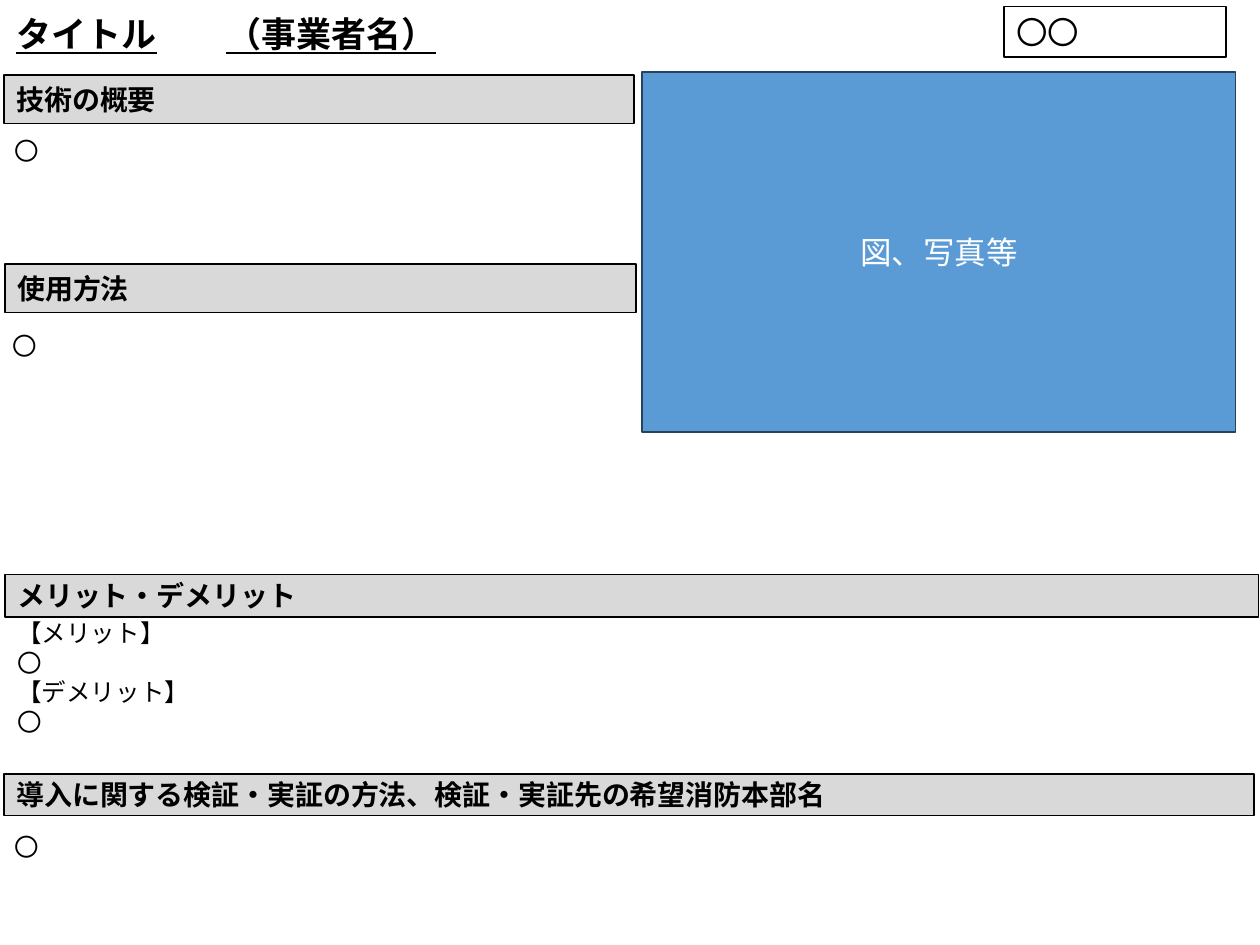
from pptx import Presentation
from pptx import util as u
from pptx.dml.color import RGBColor
from pptx.enum import shapes, text
from pptx.oxml.ns import qn
from lxml import etree

BLACK = RGBColor(0, 0, 0)
WHITE = RGBColor(255, 255, 255)
GREY = RGBColor(0xD9, 0xD9, 0xD9)
BLUE = RGBColor(0x5B, 0x9B, 0xD5)
NAVY = RGBColor(0x28, 0x44, 0x5D)
GOTHIC, LATIN = "Noto Sans CJK JP", "Calibri"

# Content: boxes are left, top, width, height in cm
TITLE = ("タイトル\t（事業者名）", (0.08, 0.13, 25.27, 1.12))
TITLE_TAB = 4.23
HEADINGS = [
    ("技術の概要", (0.08, 1.52, 12.7, 0.97)),
    ("使用方法", (0.1, 5.33, 12.73, 0.97)),
    ("メリット・デメリット", (0.1, 11.58, 25.27, 0.86)),
    ("導入に関する検証・実証の方法、検証・実証先の希望消防本部名", (0.08, 15.6, 25.2, 0.84)),
]
# Lines, box, hanging indent
BODIES = [
    (["〇"], (0.05, 2.62, 12.62, 0.86), 0),
    (["〇"], (0, 6.55, 14.3, 0.86), 0),
    (["【メリット】", "〇", "【デメリット】", "〇"], (0.1, 12.34, 24.82, 2.64), 0.3),
    (["〇"], (0.05, 16.64, 20.19, 0.86), 0.48),
]
FIGURE = ("図、写真等", (12.95, 1.45, 11.96, 7.26))
NUMBER = ("〇〇", (20.24, 0.13, 4.47, 1.02))

prs = Presentation()
prs.slide_width, prs.slide_height = u.Cm(25.4), u.Cm(19.05)
slide = prs.slides.add_slide(prs.slide_layouts[6])


def write(frame, lines, size, color=BLACK, font=GOTHIC, bold=False, underline=False,
          align=text.PP_ALIGN.LEFT, hang=0, tab=None):
    frame.word_wrap = True
    for i, line in enumerate(lines):
        para = frame.paragraphs[0] if i == 0 else frame.add_paragraph()
        para.alignment = align
        props = para._p.get_or_add_pPr()
        if hang:
            props.set("marL", str(u.Cm(hang)))
            props.set("indent", str(-u.Cm(hang)))
        if tab:
            tabs = etree.SubElement(props, qn("a:tabLst"))
            etree.SubElement(tabs, qn("a:tab"), pos=str(u.Cm(tab)), algn="l")
        run = para.add_run()
        run.text = line
        run.font.size = u.Pt(size)
        run.font.bold, run.font.underline = bold, underline
        run.font.color.rgb = color
        run.font.name = font
        etree.SubElement(run._r.get_or_add_rPr(), qn("a:ea"), typeface=font)


def add_box(box, fill, line):
    shape = slide.shapes.add_shape(shapes.MSO_SHAPE.RECTANGLE, *map(u.Cm, box))
    shape.shadow.inherit = False
    shape.fill.solid()
    shape.fill.fore_color.rgb = fill
    shape.line.color.rgb = line
    shape.line.width = u.Pt(1)
    shape.text_frame.vertical_anchor = text.MSO_ANCHOR.MIDDLE
    return shape.text_frame


def add_text(box):
    return slide.shapes.add_textbox(*map(u.Cm, box)).text_frame


# Section headings
for heading, box in HEADINGS:
    write(add_box(box, GREY, BLACK), [heading], 16, bold=True)

# Title
title, box = TITLE
write(add_text(box), [title], 20, bold=True, underline=True, tab=TITLE_TAB)

# Figure area
caption, box = FIGURE
write(add_box(box, BLUE, NAVY), [caption], 18, WHITE, LATIN, align=text.PP_ALIGN.CENTER)

# Number box
number, box = NUMBER
number_frame = add_box(box, WHITE, BLACK)
number_frame.vertical_anchor = text.MSO_ANCHOR.TOP
write(number_frame, [number], 18, font=LATIN)

# Section bodies
for lines, box, hang in BODIES:
    write(add_text(box), lines, 14, hang=hang)

prs.save("out.pptx")
